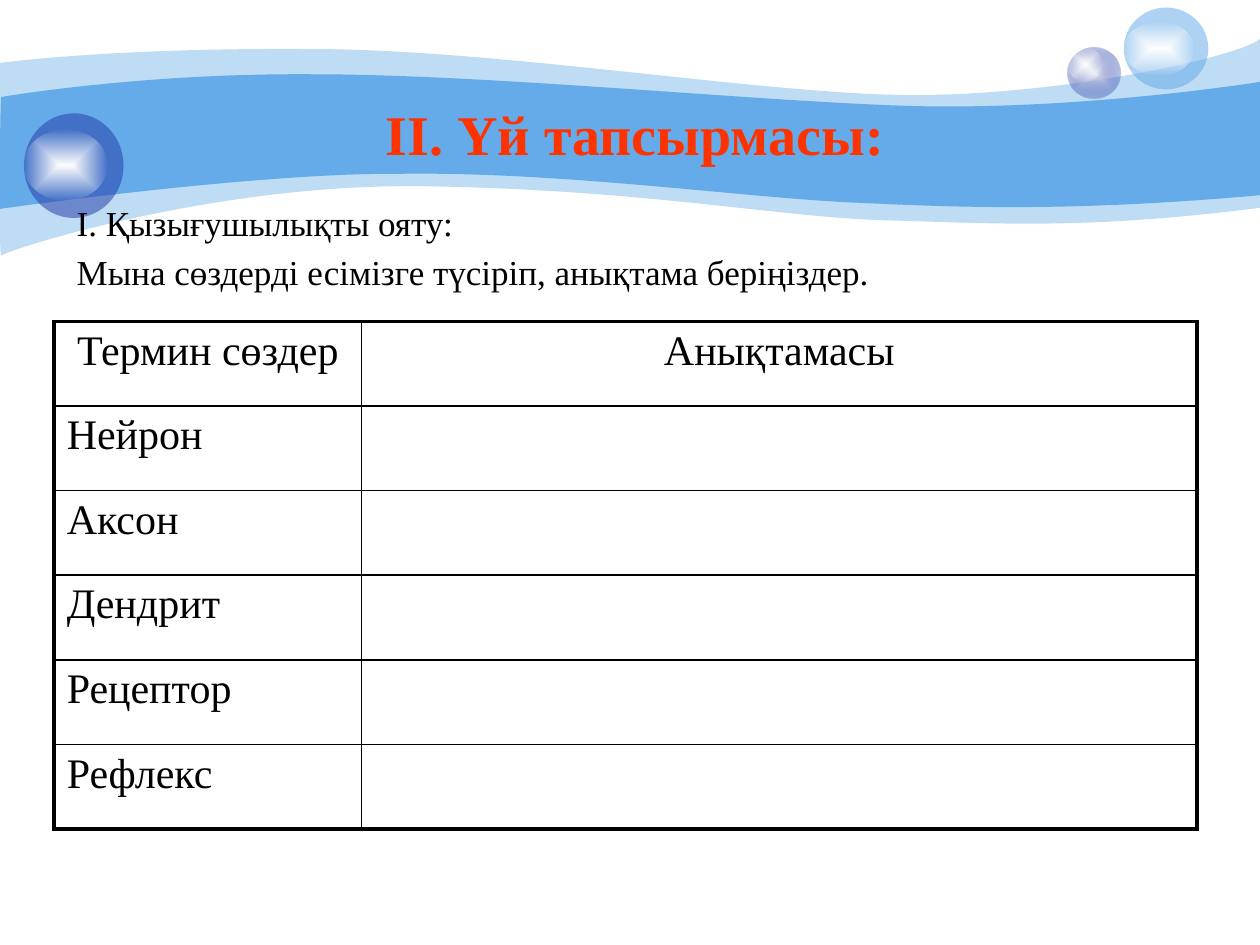
from dataclasses import dataclass

from lxml import etree
from pptx import Presentation
from pptx.dml.color import RGBColor
from pptx.enum.shapes import MSO_SHAPE
from pptx.enum.text import MSO_ANCHOR, PP_ALIGN
from pptx.oxml import parse_xml
from pptx.oxml.ns import nsdecls, qn
from pptx.util import Inches, Pt

OVAL = MSO_SHAPE.OVAL
LEFT, CENTER = PP_ALIGN.LEFT, PP_ALIGN.CENTER
TOP, MIDDLE = MSO_ANCHOR.TOP, MSO_ANCHOR.MIDDLE


@dataclass(frozen=True)
class Theme:
    font: str = "Times New Roman"
    sky: str = "65AAE9"
    navy: str = "233DA9"
    pale: str = "E1E2ED"
    white: str = "FFFFFF"
    black: str = "000000"
    title: str = "FF3300"
    title_size: int = 32
    body_size: int = 20
    table_size: int = 24
    outer_line: float = 2.25
    inner_line: float = 1


THEME = Theme()

# Each wave: start, top curves, right-hand corner, bottom curves, opacity
WAVES = [
    ((0, 0.5),
     [(0.24, 0.47), (1.07, 0.38), (2.47, 0.39), (3.86, 0.39), (5.75, 0.7), (6.99, 0.75),
      (8.22, 0.8), (9.8, 0.47), (10, 0.31)],
     (10, 1.65),
     [(8.58, 1.83), (7.87, 1.77), (7.05, 1.75), (6.22, 1.73), (5.15, 1.51), (3.43, 1.48),
      (1.72, 1.44), (0.04, 1.99), (0.01, 2.03), (-0.01, 2.08), (0, 0.75), (0, 0.5)],
     41),
    ((0.01, 0.77),
     [(0.02, 0.77), (1.1, 0.58), (2.48, 0.59), (3.86, 0.59), (5.95, 0.8), (7.18, 0.84),
      (8.41, 0.88), (9.76, 0.69), (10, 0.65)],
     (10, 1.55),
     [(8.53, 1.68), (7.65, 1.65), (6.82, 1.61), (5.99, 1.58), (4.47, 1.36), (3.17, 1.38),
      (2.03, 1.37), (-0.02, 1.66), (-0.01, 1.66), (0, 1.66), (0, 0.77), (0.01, 0.77)],
     100),
]

# Each bubble: box, glow box, gradient stops (colour, opacity) from centre to edge
BUBBLES = [
    ((8.47, 0.38, 0.42, 0.4), (8.47, 0.38, 0.28, 0.27),
     [(THEME.pale, 100), (THEME.navy, 31)]),
    ((8.92, 0.06, 0.67, 0.65), (8.92, 0.17, 0.56, 0.43), [(THEME.sky, 53)]),
    ((0.19, 0.9, 0.79, 0.83), (0.19, 1.03, 0.66, 0.56), [(THEME.navy, 53)]),
]
GLOW = [(THEME.white, 100), (THEME.white, 0)]

TERMS = ["Нейрон", "Аксон", "Дендрит", "Рецептор", "Рефлекс"]
ROWS = [("Термин сөздер", "Анықтамасы")] + [(term, "") for term in TERMS]


def paint(shape, stops):
    """Fill with one translucent colour, or a gradient from the centre out."""
    shape.shadow.inherit = False
    shape.line.fill.background()
    shape.fill.solid()
    shape.fill.fore_color.rgb = RGBColor.from_string(stops[0][0])
    solid = shape._element.spPr.find(qn("a:solidFill"))
    if len(stops) == 1:
        if stops[0][1] < 100:
            alpha = etree.SubElement(solid[0], qn("a:alpha"))
            alpha.set("val", str(stops[0][1] * 1000))
        return
    stop_xml = "".join(
        f'<a:gs pos="{index * 100000}"><a:srgbClr val="{color}">'
        f'<a:alpha val="{opacity * 1000}"/></a:srgbClr></a:gs>'
        for index, (color, opacity) in enumerate(stops))
    gradient = parse_xml(
        f'<a:gradFill {nsdecls("a")} rotWithShape="1"><a:gsLst>{stop_xml}</a:gsLst>'
        '<a:path path="shape"><a:fillToRect l="50000" t="50000" r="50000" b="50000"/>'
        '</a:path></a:gradFill>')
    solid.getparent().replace(solid, gradient)


def bend(segments):
    """Turn each three straight segments into one cubic curve."""
    for index in range(0, len(segments), 3):
        curve = segments[index]
        curve.tag = qn("a:cubicBezTo")
        for segment in segments[index + 1:index + 3]:
            curve.append(segment[0])
            segment.getparent().remove(segment)


def add_wave(slide, start, top, corner, bottom, opacity):
    builder = slide.shapes.build_freeform(Inches(start[0]), Inches(start[1]))
    builder.add_line_segments(
        [(Inches(x), Inches(y)) for x, y in top + [corner] + bottom], close=True)
    wave = builder.convert_to_shape()
    segments = list(wave._element.iter(qn("a:lnTo")))
    bend(segments[:len(top)])
    bend(segments[len(top) + 1:])
    paint(wave, [(THEME.sky, opacity)])


def add_bubble(slide, box, glow_box, stops):
    group = slide.shapes.add_group_shape()
    for oval_box, oval_stops in ((box, stops), (glow_box, GLOW)):
        paint(group.shapes.add_shape(OVAL, *map(Inches, oval_box)), oval_stops)


def write(frame, lines, *, size, color=THEME.black, bold=False, align=LEFT,
          hanging=0, gap=0):
    frame.word_wrap = True
    for index, line in enumerate(lines):
        paragraph = frame.paragraphs[0] if index == 0 else frame.add_paragraph()
        paragraph.alignment = align
        if index:
            paragraph.space_before = Pt(gap)
        if hanging:
            properties = paragraph._p.get_or_add_pPr()
            properties.set("marL", str(Inches(hanging)))
            properties.set("indent", str(-Inches(hanging)))
        paragraph.font.size = Pt(size)
        if line:
            run = paragraph.add_run()
            run.text = line
            run.font.name = THEME.font
            run.font.size = Pt(size)
            run.font.bold = bold
            run.font.color.rgb = RGBColor.from_string(color)


def add_text(slide, box, lines, anchor=TOP, **text_format):
    frame = slide.shapes.add_textbox(*map(Inches, box)).text_frame
    frame.vertical_anchor = anchor
    write(frame, lines, **text_format)


def set_borders(cell, widths):
    properties = cell._tc.get_or_add_tcPr()
    for side, width in widths.items():
        properties.append(parse_xml(
            f'<a:ln{side} {nsdecls("a")} w="{Pt(width)}"><a:solidFill>'
            f'<a:srgbClr val="{THEME.black}"/></a:solidFill></a:ln{side}>'))


def add_term_table(slide, box, column_widths):
    row_count, column_count = len(ROWS), len(column_widths)
    table = slide.shapes.add_table(row_count, column_count, *map(Inches, box)).table
    table.first_row = table.horz_banding = False
    for column, width in zip(table.columns, column_widths):
        column.width = Inches(width)
    for r, texts in enumerate(ROWS):
        for c, text in enumerate(texts):
            cell = table.cell(r, c)
            on_edge = {"L": c == 0, "R": c == column_count - 1,
                       "T": r == 0, "B": r == row_count - 1}
            set_borders(cell, {side: THEME.outer_line if edge else THEME.inner_line
                               for side, edge in on_edge.items()})
            cell.fill.background()
            write(cell.text_frame, [text], size=THEME.table_size,
                  align=CENTER if r == 0 else LEFT)


def main():
    presentation = Presentation()
    presentation.slide_width, presentation.slide_height = Inches(10), Inches(7.5)
    slide = presentation.slides.add_slide(presentation.slide_layouts[6])

    # Banner
    for wave in WAVES:
        add_wave(slide, *wave)
    for bubble in BUBBLES:
        add_bubble(slide, *bubble)

    # Title and task
    add_text(slide, (1, 0.75, 8.08, 0.62), ["ІІ. Үй тапсырмасы:"], anchor=MIDDLE,
             size=THEME.title_size, color=THEME.title, bold=True, align=CENTER)
    add_text(slide, (0.51, 1.55, 9.15, 0.88),
             ["І. Қызығушылықты ояту:",
              "Мына сөздерді есімізге түсіріп, анықтама беріңіздер."],
             size=THEME.body_size, hanging=0.38, gap=4)

    # Terms and definitions
    add_term_table(slide, (0.43, 2.55, 9.07, 4.03), (2.44, 6.63))

    presentation.save("out.pptx")


if __name__ == "__main__":
    main()
